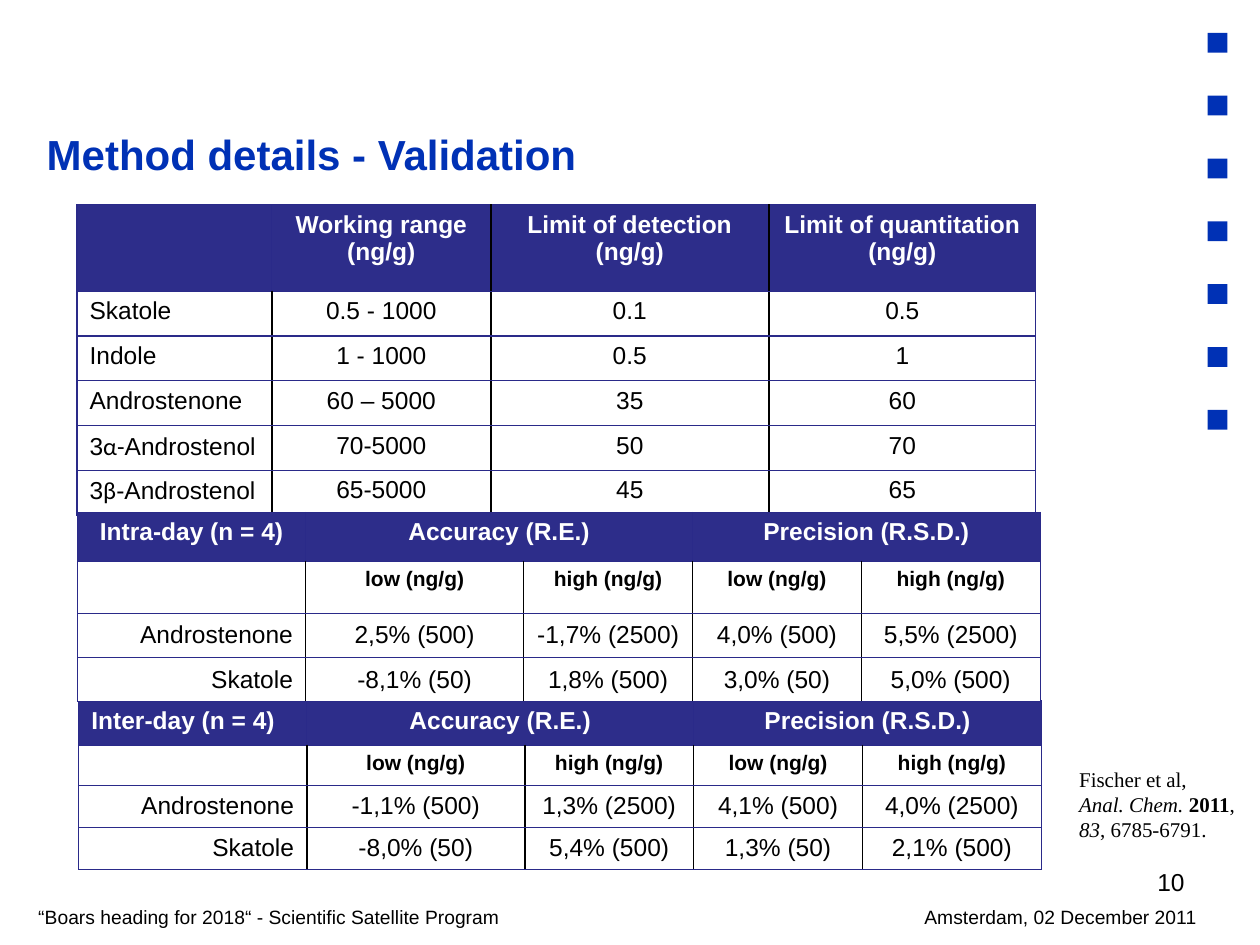
from dataclasses import dataclass

from lxml.etree import SubElement
from pptx import Presentation
from pptx.dml.color import RGBColor
from pptx.enum.shapes import MSO_SHAPE as Preset
from pptx.enum.text import MSO_ANCHOR as Anchor, PP_ALIGN as Align
from pptx.oxml.ns import qn
from pptx.util import Pt


@dataclass(frozen=True)
class Theme:
    accent: str = "0031B5"
    header: str = "2D2D8A"
    rule: str = "2A2A89"
    black: str = "000000"
    white: str = "FFFFFF"
    sans: str = "Arial"
    serif: str = "Times New Roman"
    greek: str = "Calibri"
    title: int = 24
    body: int = 14
    small: int = 12
    footer: int = 11


theme = Theme()


def add_run(paragraph, text, size, color=theme.black, face=theme.sans,
            bold=False, italic=False):
    run = paragraph.add_run()
    run.text = text
    font = run.font
    font.name, font.size, font.bold, font.italic = face, Pt(size), bold, italic
    font.color.rgb = RGBColor.from_string(color)


def add_text_frame(left, top, width, height):
    frame = slide.shapes.add_textbox(Pt(left), Pt(top), Pt(width), Pt(height)).text_frame
    frame.word_wrap = True
    return frame


deck = Presentation()
deck.slide_width, deck.slide_height = Pt(720), Pt(540)
slide = deck.slides.add_slide(deck.slide_layouts[6])

# Column of squares at the right edge
for step in range(7):
    square = slide.shapes.add_shape(
        Preset.RECTANGLE, Pt(690), Pt(18.8 + 35.9 * step), Pt(11.3), Pt(11.3))
    square.shadow.inherit = False
    square.fill.solid()
    square.fill.fore_color.rgb = RGBColor.from_string(theme.accent)
    square.line.fill.background()

title = add_text_frame(19.6, 49, 588, 78)
title.vertical_anchor = Anchor.MIDDLE
add_run(title.paragraphs[0], "Method details - Validation", theme.title,
        theme.accent, bold=True)

page_number = add_text_frame(516, 492, 168, 37).paragraphs[0]
page_number.alignment = Align.RIGHT
add_run(page_number, "10", theme.body)

# Footer: the date sits on a right tab stop
footer = add_text_frame(14.8, 514, 684, 16).paragraphs[0]
tab_stops = SubElement(footer._p.get_or_add_pPr(), qn("a:tabLst"))
SubElement(tab_stops, qn("a:tab"), pos=str(Pt(662)), algn="r")
add_run(footer, "“Boars heading for 2018“ - Scientific Satellite Program"
        "\tAmsterdam, 02 December 2011", theme.footer)

# Tables: "|" surrounds Greek letters, a line break starts a paragraph
limits = [
    ["", "Working range\n(ng/g)", "Limit of detection\n(ng/g)",
     "Limit of quantitation\n(ng/g)"],
    ["Skatole", "0.5 - 1000", "0.1", "0.5"],
    ["Indole", "1 - 1000", "0.5", "1"],
    ["Androstenone", "60 – 5000", "35", "60"],
    ["3|α-|Androstenol", "70-5000", "50", "70"],
    ["3|β|-Androstenol", "65-5000", "45", "65"],
]
measures = ["Accuracy (R.E.)", "", "Precision (R.S.D.)", ""]
levels = ["", *["low (ng/g)", "high (ng/g)"] * 2]
intra_day = [
    ["Intra-day (n = 4)", *measures],
    levels,
    ["Androstenone", "2,5% (500)", "-1,7% (2500)", "4,0% (500)", "5,5% (2500)"],
    ["Skatole", "-8,1% (50)", "1,8% (500)", "3,0% (50)", "5,0% (500)"],
]
inter_day = [
    ["Inter-day (n = 4)", *measures],
    levels,
    ["Androstenone", "-1,1% (500)", "1,3% (2500)", "4,1% (500)", "4,0% (2500)"],
    ["Skatole", "-8,0% (50)", "5,4% (500)", "1,3% (50)", "2,1% (500)"],
]
limit_widths = [111.4, 125.1, 158.9, 152.6]
day_widths = [130.3, 124.6, 96.5, 96.5, 102.2]

# Rows, left, top, column widths, row heights, alignment of the top left cell
tables = [
    (inter_day, 45, 400.6, day_widths, [25.2, 23, 23, 23], Align.LEFT),
    (limits, 44, 117, limit_widths, [49.4] + [25.6] * 5, Align.LEFT),
    (intra_day, 44.4, 292.8, day_widths, [28, 29.6, 25.3, 25.3], Align.CENTER),
]
for rows, left, top, widths, heights, corner_align in tables:
    by_day = rows is not limits
    last = len(widths) - 1
    grid = slide.shapes.add_table(
        len(rows), len(widths), Pt(left), Pt(top),
        Pt(sum(widths)), Pt(sum(heights))).table
    for column, width in zip(grid.columns, widths):
        column.width = Pt(width)
    for r, (texts, height) in enumerate(zip(rows, heights)):
        grid.rows[r].height = Pt(height)
        is_header = r == 0
        is_level = by_day and r == 1
        size = theme.small if is_level else theme.body
        for c, text in enumerate(texts):
            cell = grid.cell(r, c)
            if by_day and r > 1:
                cell.vertical_anchor = Anchor.MIDDLE

            # Inner vertical rules are black, except where the header runs on
            plain_left = c == 0 or is_header and (by_day or c == 1)
            plain_right = c == last or is_header and (by_day or c == 0)
            properties = cell._tc.get_or_add_tcPr()
            for edge, plain in (("lnL", plain_left), ("lnR", plain_right),
                                ("lnT", True), ("lnB", True)):
                line = SubElement(properties, qn(f"a:{edge}"),
                                  w=str(Pt(0.75 if plain else 1)))
                paint = SubElement(line, qn("a:solidFill"))
                SubElement(paint, qn("a:srgbClr"),
                           val=theme.rule if plain else theme.black)
            cell.fill.solid()
            cell.fill.fore_color.rgb = RGBColor.from_string(
                theme.header if is_header else theme.white)

            if c:
                align = Align.CENTER
            elif is_header:
                align = corner_align
            else:
                align = Align.RIGHT if by_day else Align.LEFT
            frame = cell.text_frame
            for n, words in enumerate(text.split("\n")):
                paragraph = frame.add_paragraph() if n else frame.paragraphs[0]
                paragraph.alignment = align
                if not words:
                    SubElement(paragraph._p, qn("a:endParaRPr"), sz=str(size * 100))
                    continue
                for part, piece in enumerate(words.split("|")):
                    add_run(paragraph, piece, size,
                            theme.white if is_header else theme.black,
                            theme.greek if part % 2 else theme.sans,
                            bold=is_header or is_level)
    if by_day:
        for c in (1, 3):
            grid.cell(0, c).merge(grid.cell(0, c + 1))

# Literature reference: text, bold, italic
citation = [
    [("Fischer et al,", False, False)],
    [("Anal. Chem. ", False, True), ("2011", True, False), (",", False, False)],
    [("83", False, True), (", 6785-6791.", False, False)],
]
reference = add_text_frame(609.6, 434.4, 108, 51)
for n, pieces in enumerate(citation):
    paragraph = reference.add_paragraph() if n else reference.paragraphs[0]
    for words, bold, italic in pieces:
        add_run(paragraph, words, theme.small, face=theme.serif,
                bold=bold, italic=italic)

deck.save("out.pptx")
